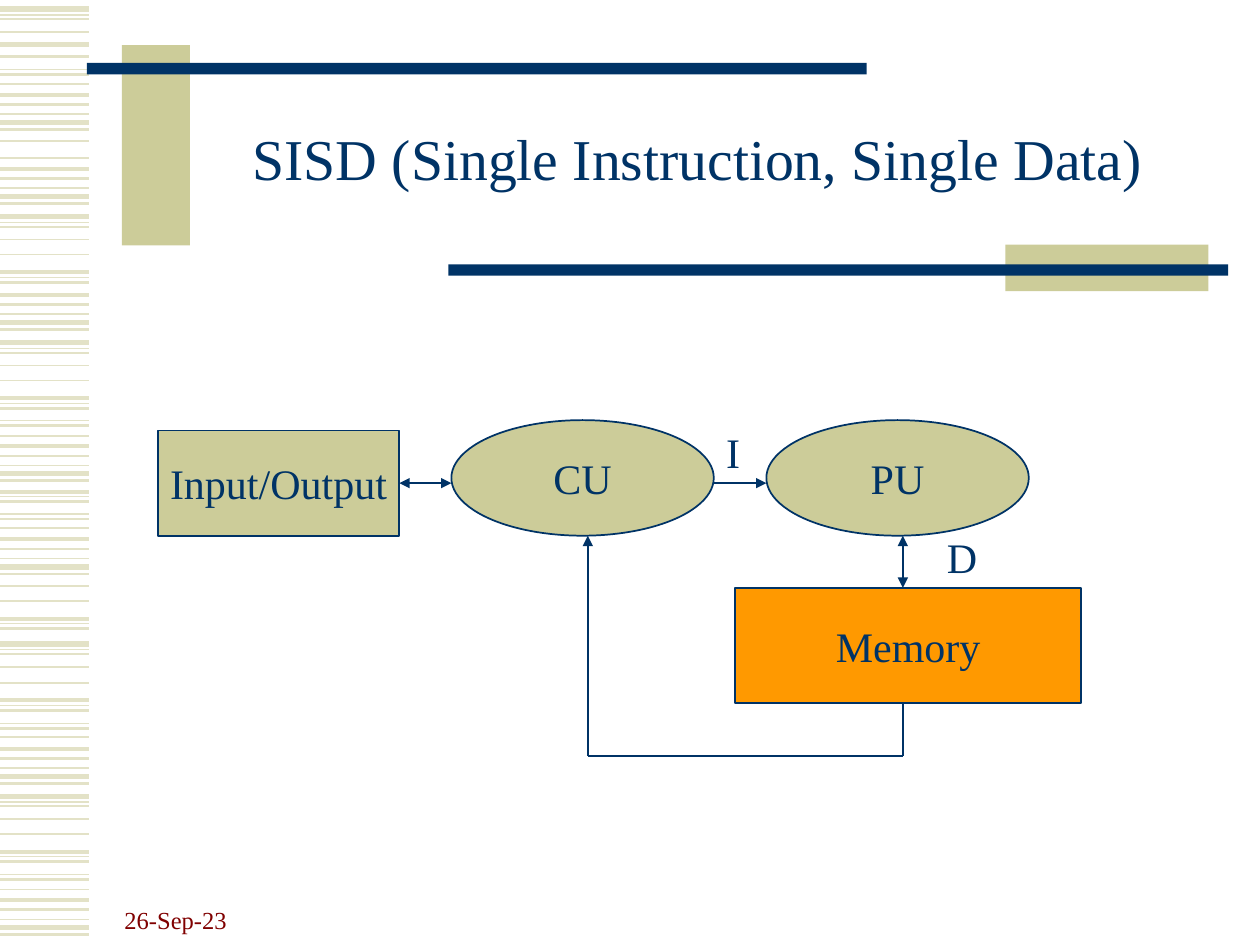
from dataclasses import dataclass

from lxml.etree import SubElement
from pptx import Presentation
from pptx.dml.color import RGBColor
from pptx.enum.shapes import MSO_CONNECTOR, MSO_SHAPE
from pptx.enum.text import MSO_ANCHOR as Anchor, PP_ALIGN as Align
from pptx.oxml.ns import qn
from pptx.util import Cm, Pt

NAVY = RGBColor(0x00, 0x33, 0x66)
KHAKI = RGBColor(0xCC, 0xCC, 0x99)
PALE_KHAKI = RGBColor(0xE3, 0xE2, 0xC7)
ORANGE = RGBColor(0xFF, 0x99, 0x00)
MAROON = RGBColor(0x80, 0x00, 0x00)
FONT = "Times New Roman"
STRIPE_LENGTH = 1.8


@dataclass
class Motif:
    """A run of stripes, as (offset in cm, weight in pt), repeated at each start."""
    stripes: list[tuple[float, float]]
    starts: list[float]


@dataclass
class Box:
    left: float
    top: float
    width: float
    height: float


@dataclass
class Node:
    text: str
    box: Box
    kind: MSO_SHAPE
    fill: RGBColor


@dataclass
class Link:
    start: tuple[float, float]
    end: tuple[float, float]
    head: bool = False
    tail: bool = False


@dataclass
class Label:
    text: str
    box: Box
    size: float = 24
    color: RGBColor = NAVY
    align: Align = Align.LEFT
    anchor: Anchor = Anchor.TOP
    line_spacing: float = 1.0
    space_before: float = 0


MOTIFS = [
    Motif([(0, 3), (0.12, 0.75), (0.2, 1), (0.46, 1)],
          [0.18, 4.37, 6.91, 12.98, 16.05]),
    Motif([(0, 2.25), (0.1, 0.75), (0.2, 1.5)],
          [5.49, 8.03, 9.91, 12.47, 14.12, 17.17]),
    Motif([(0, 0.75), (0.1, 1.5)],
          [1.4, 8.48, 10.36, 14.58, 17.63]),
    Motif([(0, 2.25), (0.2, 1.5), (0.39, 0.75), (0.56, 3), (0.7, 1.5)],
          [1.91, 3.4, 5.94, 8.99, 10.87, 15.09, 18.14]),
    Motif([(0, 1)],
          [1.7, 2.84, 3.18, 5.13, 7.67, 8.79, 10.64, 11.81, 12.12, 13.77,
           14.86, 16.81, 17.93]),
    Motif([(0, 3), (0.25, 1.5)], [0.89]),
]

BARS = [
    (Box(2.46, 0.91, 1.37, 4.04), KHAKI),
    (Box(1.75, 1.27, 15.72, 0.23), NAVY),
    (Box(20.27, 4.93, 4.09, 0.94), KHAKI),
    (Box(9.04, 5.33, 15.72, 0.23), NAVY),
]

NODES = [
    Node("Input/Output", Box(3.18, 8.68, 4.87, 2.12), MSO_SHAPE.RECTANGLE, KHAKI),
    Node("CU", Box(9.1, 8.47, 5.29, 2.33), MSO_SHAPE.OVAL, KHAKI),
    Node("Memory", Box(14.82, 11.85, 6.98, 2.33), MSO_SHAPE.RECTANGLE, ORANGE),
    Node("PU", Box(15.45, 8.47, 5.29, 2.33), MSO_SHAPE.OVAL, KHAKI),
]

LINKS = [
    Link((8.05, 9.74), (9.1, 9.74), head=True, tail=True),
    Link((18.2, 10.8), (18.2, 11.85), head=True, tail=True),
    Link((14.39, 9.74), (15.45, 9.74), tail=True),
    Link((18.2, 14.18), (18.2, 15.24)),
    Link((18.2, 15.24), (11.85, 15.24)),
    Link((11.85, 15.24), (11.85, 10.8), tail=True),
]

LABELS = [
    Label("26-Sep-23", Box(2.26, 17.7, 5.28, 1.27), 14, MAROON, anchor=Anchor.BOTTOM),
    Label("SISD (Single Instruction, Single Data)", Box(3.81, 1.7, 20.5, 3.18), 33,
          align=Align.CENTER, anchor=Anchor.MIDDLE, line_spacing=0.85),
    Label("I", Box(14.39, 8.47, 1.06, 1.27), space_before=3),
    Label("D", Box(18.84, 10.58, 1.27, 1.27), space_before=3),
]


def place(box: Box) -> tuple[Cm, Cm, Cm, Cm]:
    return Cm(box.left), Cm(box.top), Cm(box.width), Cm(box.height)


def add_run(p, text: str, size: float, color: RGBColor) -> None:
    r = p.add_run()
    r.text = text
    r.font.name = FONT
    r.font.size = Pt(size)
    r.font.color.rgb = color


def add_line(s, link: Link, color: RGBColor, weight: float) -> None:
    (x1, y1), (x2, y2) = link.start, link.end
    line = s.shapes.add_connector(MSO_CONNECTOR.STRAIGHT, Cm(x1), Cm(y1), Cm(x2), Cm(y2))
    line.line.color.rgb = color
    line.line.width = Pt(weight)
    ln = line.line._get_or_add_ln()
    for tag, shown in (("a:headEnd", link.head), ("a:tailEnd", link.tail)):
        if shown:
            SubElement(ln, qn(tag), type="triangle")
    SubElement(line._element.spPr, qn("a:effectLst"))


def add_filled(s, box: Box, kind: MSO_SHAPE, fill: RGBColor):
    sp = s.shapes.add_shape(kind, *place(box))
    sp.shadow.inherit = False
    sp.fill.solid()
    sp.fill.fore_color.rgb = fill
    sp.line.fill.background()
    return sp


def add_node(s, node: Node) -> None:
    sp = add_filled(s, node.box, node.kind, node.fill)
    sp.line.color.rgb = NAVY
    sp.line.width = Pt(1)
    tf = sp.text_frame
    tf.word_wrap = False
    tf.vertical_anchor = Anchor.MIDDLE
    p = tf.paragraphs[0]
    p.alignment = Align.CENTER
    add_run(p, node.text, 24, NAVY)


def add_label(s, label: Label) -> None:
    tf = s.shapes.add_textbox(*place(label.box)).text_frame
    tf.word_wrap = True
    tf.vertical_anchor = label.anchor
    p = tf.paragraphs[0]
    p.alignment = label.align
    p.line_spacing = label.line_spacing
    p.space_before = Pt(label.space_before)
    add_run(p, label.text, label.size, label.color)


def main() -> None:
    prs = Presentation()
    prs.slide_width, prs.slide_height = Cm(25.4), Cm(19.05)
    s = prs.slides.add_slide(prs.slide_layouts[6])
    for motif in MOTIFS:
        for start in motif.starts:
            for offset, weight in motif.stripes:
                y = start + offset
                add_line(s, Link((0, y), (STRIPE_LENGTH, y)), PALE_KHAKI, weight)
    for box, fill in BARS:
        add_filled(s, box, MSO_SHAPE.RECTANGLE, fill)
    for node in NODES:
        add_node(s, node)
    for link in LINKS:
        add_line(s, link, NAVY, 1)
    for label in LABELS:
        add_label(s, label)
    prs.save("out.pptx")


if __name__ == "__main__":
    main()
